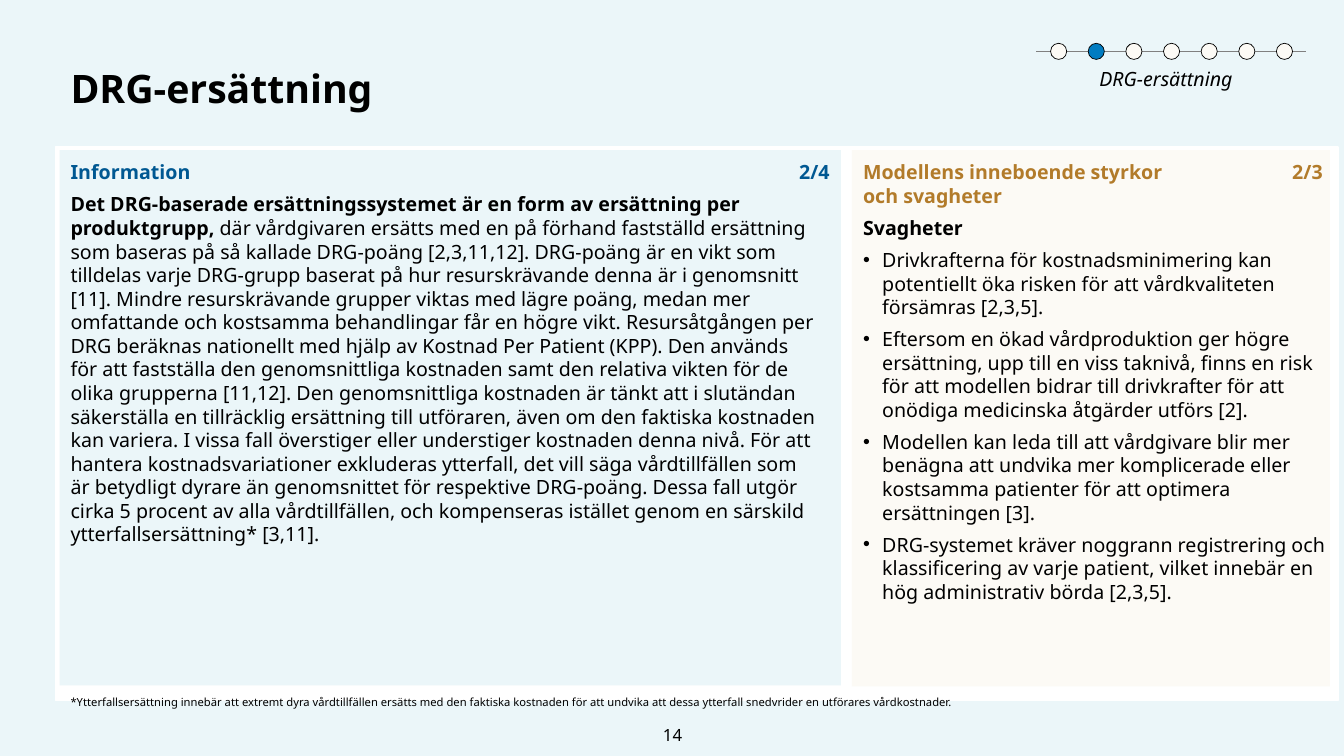
from dataclasses import dataclass

from lxml.etree import SubElement
from pptx import Presentation
from pptx.dml.color import RGBColor as Color
from pptx.enum.shapes import MSO_CONNECTOR as Connector, MSO_SHAPE as Shape
from pptx.enum.text import MSO_ANCHOR as Anchor, PP_ALIGN as Align
from pptx.oxml.ns import qn
from pptx.util import Inches, Pt


@dataclass(frozen=True)
class Theme:
    """Hold the font, colours and type sizes of the slide."""
    font: str = "Noto Sans"
    black: str = "000000"
    white: str = "FFFFFF"
    ice: str = "EBF6F9"
    cream: str = "FCFAF5"
    navy: str = "005892"
    blue: str = "017CC1"
    ochre: str = "B27B2A"
    gray: str = "808080"
    title: float = 28
    body: float = 14
    number: float = 12
    note: float = 8
    body_leading: float = 16.85


class SlideBuilder:
    """Draw styled elements on the current slide."""

    def __init__(self, slide, theme):
        """Keep the slide and theme and paint the background."""
        self.slide = slide
        self.theme = theme
        fill = slide.background.fill
        fill.solid()
        fill.fore_color.rgb = Color.from_string(theme.ice)

    def block(self, box, fill, line=None, width=1, kind=Shape.RECTANGLE, parent=None):
        """Add a filled preset shape with an optional outline."""
        shapes = (parent or self.slide).shapes
        shape = shapes.add_shape(kind, *map(Inches, box))
        shape.shadow.inherit = False
        shape.fill.solid()
        shape.fill.fore_color.rgb = Color.from_string(fill)
        if line:
            shape.line.color.rgb = Color.from_string(line)
            shape.line.width = Pt(width)
        else:
            shape.line.fill.background()

    def frame(self, box, insets=(0, 0, 0.1, 0.05), anchor=Anchor.TOP):
        """Add an empty wrapping text box and return its text frame."""
        frame = self.slide.shapes.add_textbox(*map(Inches, box)).text_frame
        frame.word_wrap = True
        frame.vertical_anchor = anchor
        (frame.margin_left, frame.margin_top,
         frame.margin_right, frame.margin_bottom) = map(Inches, insets)
        return frame

    def style(self, paragraph, size, color=None, bold=False, italic=False):
        """Set the font of a whole paragraph."""
        font = paragraph.font
        font.name = self.theme.font
        font.size = Pt(size)
        font.color.rgb = Color.from_string(color or self.theme.black)
        font.bold = bold
        font.italic = italic

    def label(self, text, box, size, align=Align.LEFT, spacing=None,
              insets=(0, 0.05, 0.1, 0.05), anchor=Anchor.TOP, **font):
        """Add a one-paragraph text box."""
        paragraph = self.frame(box, insets, anchor).paragraphs[0]
        paragraph.text = text
        paragraph.alignment = align
        paragraph.line_spacing = spacing
        self.style(paragraph, size, **font)

    def bullet(self, paragraph):
        """Give a paragraph a hanging bullet."""
        properties = paragraph._p.get_or_add_pPr()
        properties.set("marL", str(Inches(0.19)))
        properties.set("indent", str(-Inches(0.19)))
        SubElement(properties, qn("a:buFont")).set("typeface", "Arial")
        SubElement(properties, qn("a:buChar")).set("char", "•")

    def panel(self, box, fill, color, heading, page, page_left, text_width):
        """Add a coloured panel with heading and page count, returning its text frame."""
        left, top = box[:2]
        self.block(box, fill)
        frame = self.frame((left + 0.11, top + 0.1, text_width, 4.88))
        self.paragraph(frame, heading, color=color, bold=True)
        self.label(page, (page_left, top + 0.1, 0.97, 0.23), self.theme.body,
                   Align.RIGHT, insets=(0, 0.05, 0, 0), anchor=Anchor.BOTTOM,
                   color=color, bold=True)
        return frame

    def paragraph(self, frame, text, lead="", bulleted=False, **font):
        """Add a body paragraph with an optional bold lead."""
        first = frame.paragraphs[0]
        paragraph = frame.add_paragraph() if first.text else first
        paragraph.space_after = Pt(6)
        paragraph.line_spacing = Pt(self.theme.body_leading)
        if bulleted:
            self.bullet(paragraph)
        paragraph.text = lead or text
        if lead:
            paragraph.runs[0].font.bold = True
            paragraph.add_run().text = text
        self.style(paragraph, self.theme.body, **font)

    def progress(self, count, current):
        """Add a row of step dots on a line, with the current one marked."""
        theme = self.theme
        group = self.slide.shapes.add_group_shape()
        line = group.shapes.add_connector(
            Connector.STRAIGHT, *map(Inches, (10.28, 0.51, 12.95, 0.51)))
        line.line.color.rgb = Color.from_string(theme.gray)
        line.line.width = Pt(1)
        SubElement(line._element.spPr, qn("a:effectLst"))
        step = (12.66 - 10.42) / (count - 1)
        for index in range(count):
            fill = theme.blue if index == current else theme.cream
            self.block((10.42 + index * step, 0.43, 0.16, 0.16), fill,
                       theme.black, 0.5, Shape.OVAL, group)


LEAD = "Det DRG-baserade ersättningssystemet är en form av ersättning per produktgrupp, "
INFORMATION = (
    "där vårdgivaren ersätts med en på förhand fastställd ersättning som baseras på så "
    "kallade DRG-poäng [2,3,11,12].",
    "DRG-poäng är en vikt som tilldelas varje DRG-grupp baserat på hur resurskrävande "
    "denna är i genomsnitt [11].",
    "Mindre resurskrävande grupper viktas med lägre poäng, medan mer omfattande och "
    "kostsamma behandlingar får en högre vikt.",
    "Resursåtgången per DRG beräknas nationellt med hjälp av Kostnad Per Patient (KPP).",
    "Den används för att fastställa den genomsnittliga kostnaden samt den relativa vikten "
    "för de olika grupperna [11,12].",
    "Den genomsnittliga kostnaden är tänkt att i slutändan säkerställa en tillräcklig "
    "ersättning till utföraren, även om den faktiska kostnaden kan variera.",
    "I vissa fall överstiger eller understiger kostnaden denna nivå.",
    "För att hantera kostnadsvariationer exkluderas ytterfall, det vill säga vårdtillfällen "
    "som är betydligt dyrare än genomsnittet för respektive DRG-poäng.",
    "Dessa fall utgör cirka 5 procent av alla vårdtillfällen, och kompenseras istället "
    "genom en särskild ytterfallsersättning* [3,11].")
WEAKNESSES = (
    "Drivkrafterna för kostnadsminimering kan potentiellt öka risken för att "
    "vårdkvaliteten försämras [2,3,5].",
    "Eftersom en ökad vårdproduktion ger högre ersättning, upp till en viss taknivå, finns "
    "en risk för att modellen bidrar till drivkrafter för att onödiga medicinska åtgärder "
    "utförs [2].",
    "Modellen kan leda till att vårdgivare blir mer benägna att undvika mer komplicerade "
    "eller kostsamma patienter för att optimera ersättningen [3].",
    "DRG-systemet kräver noggrann registrering och klassificering av varje patient, vilket "
    "innebär en hög administrativ börda [2,3,5].")
FOOTNOTE = (
    "*Ytterfallsersättning innebär att extremt dyra vårdtillfällen ersätts med den faktiska "
    "kostnaden för att undvika att dessa ytterfall snedvrider en utförares vårdkostnader.")


def main():
    """Build the slide and save it."""
    presentation = Presentation()
    presentation.slide_width = Inches(13.33)
    presentation.slide_height = Inches(7.5)
    theme = Theme()
    builder = SlideBuilder(
        presentation.slides.add_slide(presentation.slide_layouts[6]), theme)

    builder.block((0.55, 1.46, 12.72, 5.49), theme.white, theme.white)
    builder.label("DRG-ersättning", (0.7, 0.59, 11.94, 0.8), theme.title,
                  spacing=1.1, insets=(0, 0, 0.1, 0.05), bold=True)
    builder.label("14", (6.16, 7.09, 1.02, 0.4), theme.number, Align.CENTER,
                  insets=(0.1, 0.05, 0.1, 0.05), anchor=Anchor.MIDDLE)

    weaknesses = builder.panel((8.45, 1.49, 4.74, 5.32), theme.cream, theme.ochre,
                               "Modellens inneboende styrkor\voch svagheter",
                               "2/3", 12.15, 4.71)
    builder.paragraph(weaknesses, "Svagheter", bold=True)
    for weakness in WEAKNESSES:
        builder.paragraph(weaknesses, weakness, bulleted=True)

    information = builder.panel((0.59, 1.49, 7.75, 5.31), theme.ice, theme.navy,
                                "Information", "2/4", 7.26, 7.53)
    builder.paragraph(information, " ".join(INFORMATION), lead=LEAD)

    builder.label("DRG-ersättning", (10.38, 0.61, 2.47, 0.16), theme.body,
                  Align.CENTER, spacing=Pt(theme.body_leading), italic=True)
    builder.label(FOOTNOTE, (0.7, 6.85, 10.43, 0.4), theme.note)
    builder.progress(count=7, current=1)
    presentation.save("out.pptx")


if __name__ == "__main__":
    main()
